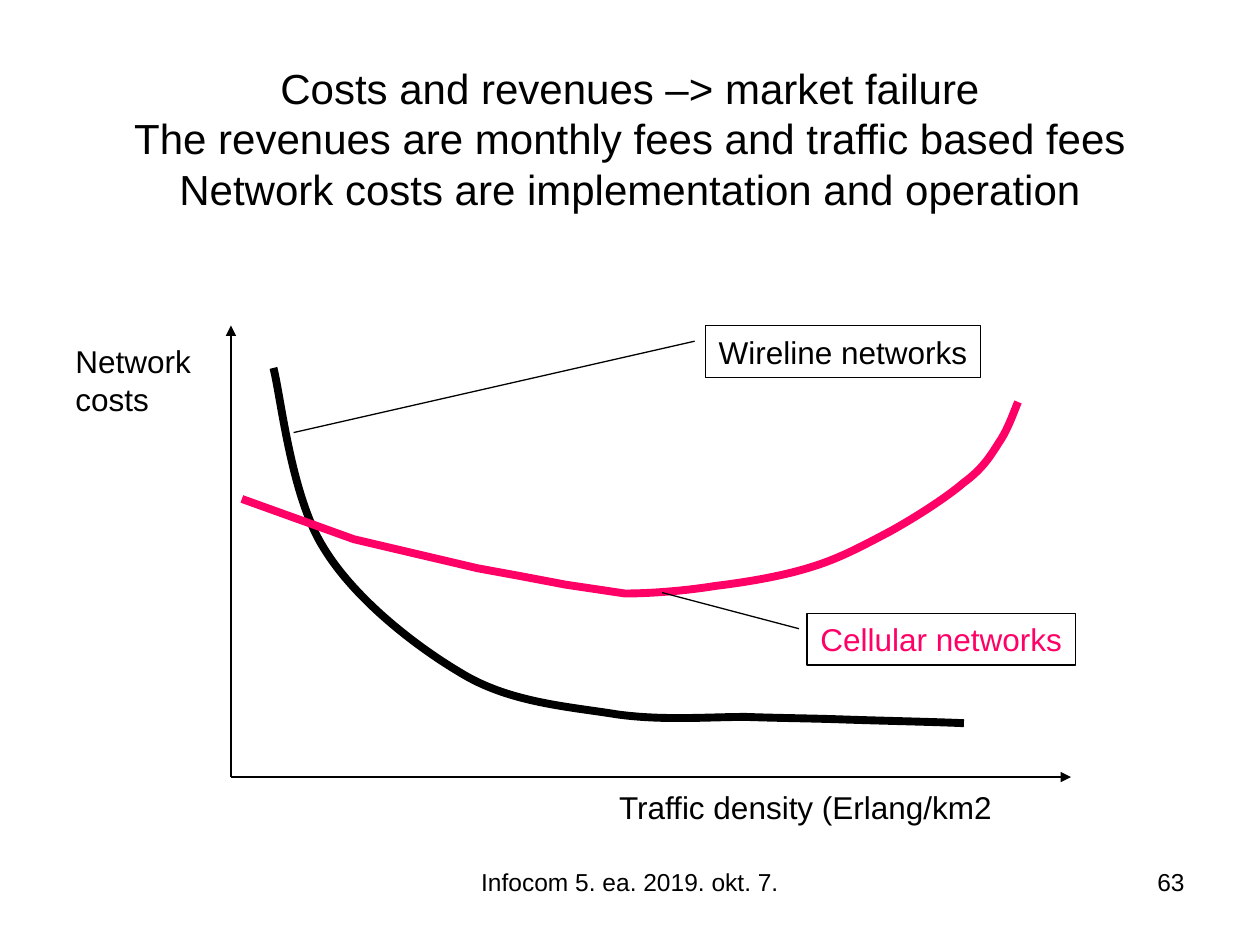
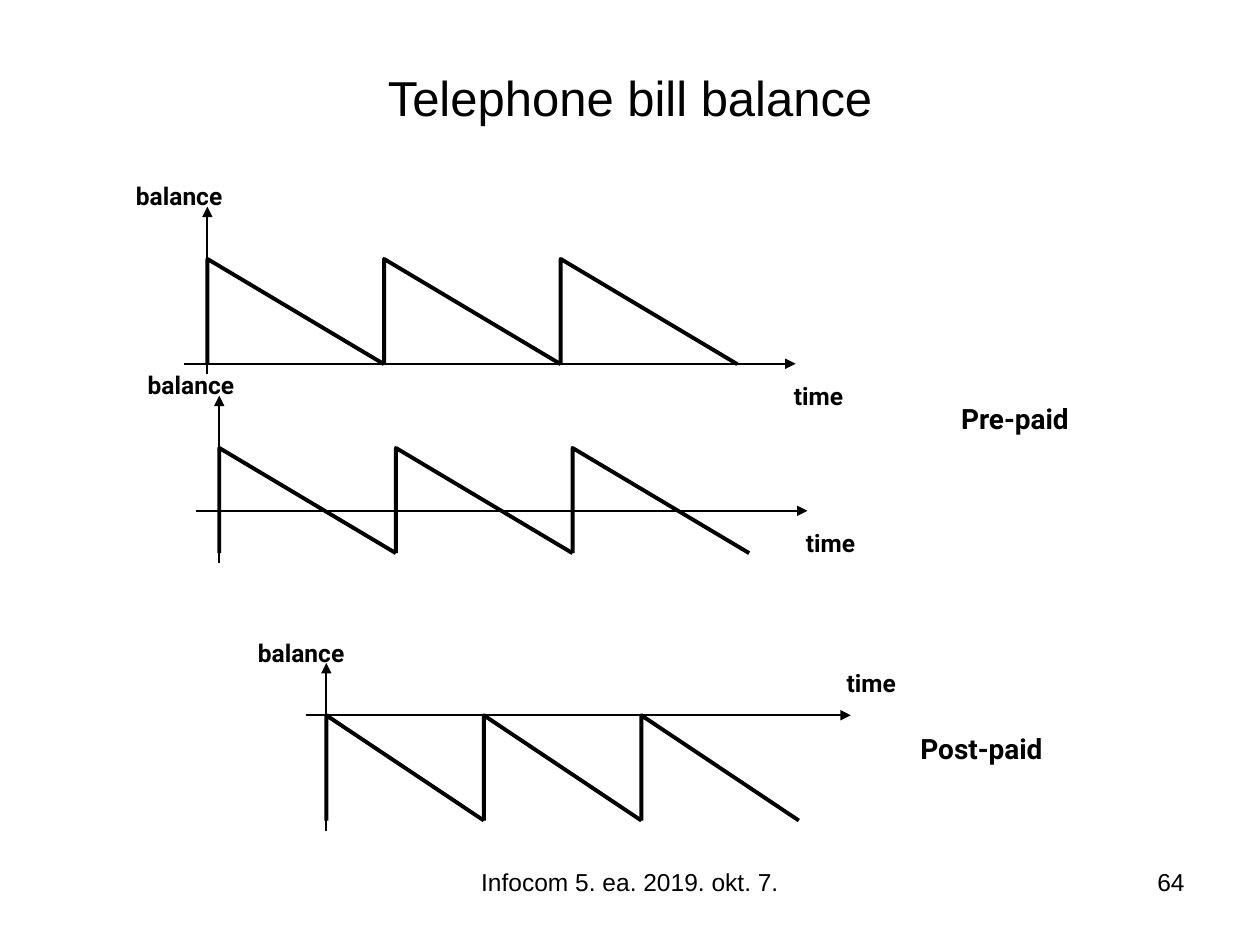
from dataclasses import dataclass
from typing import Any, NamedTuple

from lxml import etree
from pptx import Presentation
from pptx.dml.color import RGBColor
from pptx.enum.shapes import MSO_CONNECTOR, MSO_SHAPE
from pptx.enum.text import MSO_ANCHOR, PP_ALIGN
from pptx.oxml.ns import qn
from pptx.util import Inches, Pt

BLACK = RGBColor(0x00, 0x00, 0x00)
PINK = RGBColor(0xFF, 0x00, 0x66)
LEFT, CENTER, RIGHT = PP_ALIGN.LEFT, PP_ALIGN.CENTER, PP_ALIGN.RIGHT
TOP, MIDDLE = MSO_ANCHOR.TOP, MSO_ANCHOR.MIDDLE
STRAIGHT = MSO_CONNECTOR.STRAIGHT
CALLOUT = MSO_SHAPE.LINE_CALLOUT_1

SLIDE_WIDTH, SLIDE_HEIGHT = Inches(10), Inches(7.5)
COLUMN, ROW = SLIDE_WIDTH / 100, SLIDE_HEIGHT / 75
THIN, CURVE_WIDTH = 0.75, 4.5
AXIS_WIDTH, TOOTH_WIDTH = 1, 2.25
FOOTER = "Infocom 5. ea. 2019. okt. 7."


class Point(NamedTuple):
    column: float
    row: float


class Box(NamedTuple):
    column: float
    row: float
    columns: float
    rows: float


@dataclass(frozen=True)
class TextStyle:
    size: float
    font: str = "Arial"
    color: RGBColor = BLACK
    bold: bool = False
    align: PP_ALIGN = LEFT
    anchor: MSO_ANCHOR = TOP
    wrap: bool = True


@dataclass(frozen=True)
class Curve:
    """A stroke whose segments hold one point (straight) or three (cubic)."""
    start: tuple
    segments: tuple
    color: RGBColor = BLACK
    width: float = CURVE_WIDTH


@dataclass(frozen=True)
class Callout:
    text: str
    box: Box
    leader: tuple[float, ...]
    color: RGBColor


@dataclass(frozen=True)
class BalanceGraph:
    """A sawtooth balance; time_row is the axis, time_shift its label's offset."""
    origin: float
    top: float
    period: float
    time_row: float
    time_shift: float


CENTERED = {"align": CENTER, "anchor": MIDDLE}
LONG_TITLE = TextStyle(24, **CENTERED)
SHORT_TITLE = TextStyle(28, **CENTERED)
FOOTER_STYLE = TextStyle(14, align=CENTER)
NUMBER_STYLE = TextStyle(14, align=RIGHT)
COST_STYLE = TextStyle(18)
TRAFFIC_STYLE = TextStyle(18, wrap=False)
BALANCE_STYLE = TextStyle(14, "Roboto", bold=True, wrap=False, **CENTERED)
PAYMENT_STYLE = TextStyle(16, "Roboto", bold=True, **CENTERED)

WIRELINE = Curve((21.7, 29.2), (
    ((22.3, 31.5), (23.1, 39.4), (25.7, 43.5)),
    ((28.2, 47.6), (33.1, 51.4), (36.9, 53.6)),
    ((40.7, 55.8), (45.3, 56.1), (49, 56.7)),
    ((52.7, 57.2), (56.2, 56.9), (59.2, 56.9)),
    ((62.2, 57), (64, 57), (66.9, 57.1)),
    ((69.8, 57.2), (74.5, 57.3), (76.5, 57.4)),
))
CELLULAR = Curve((19.2, 39.6), (
    ((28.1, 42.8),), ((37.9, 45.1),), ((41.2, 45.7),), ((44.9, 46.4),), ((49.6, 47.1),),
    ((51.6, 47.1), (54.3, 46.9), (56.8, 46.5)),
    ((59.3, 46.2), (62.2, 45.7), (64.4, 45)),
    ((66.7, 44.3), (68.5, 43.3), (70.6, 42.2)),
    ((72.6, 41.1), (75.1, 39.5), (76.5, 38.3)),
    ((78, 37.2), (78.6, 36.2), (79.3, 35.1)),
    ((80, 34.1), (80.5, 32.6), (80.8, 31.9)),
), PINK)
NETWORKS = (
    (WIRELINE, Callout("Wireline networks", Box(56, 25.85, 21.8, 4.1),
                       (0.3, -0.04, 2.07, -1.5), BLACK)),
    (CELLULAR, Callout("Cellular networks", Box(64.05, 48.67, 21.3, 4.1),
                       (0.3, -0.03, -0.4, -0.54), PINK)),
)
COST_ORIGIN = Point(18.33, 61.67)
COST_AXIS_ENDS = (Point(85, 61.67), Point(18.33, 25.83))

TEETH = 3
PEAK_DROP, TOOTH_ROWS, AXIS_TAIL = 4.15, 8.35, 0.8
BALANCE_GRAPHS = (
    BalanceGraph(16.46, 16.4, 14.02, 28.87, 0.85),
    BalanceGraph(17.4, 31.4, 14.02, 40.54, 0.85),
    BalanceGraph(25.9, 52.62, 12.5, 56.77, -4.2),
)
PAYMENT_LABELS = (
    ("Pre-paid", Box(72.55, 31.35, 16, 3.7)),
    ("Post-paid", Box(70.75, 57.55, 14.3, 3.7)),
)


def apply(target: Any, values: dict[str, Any]) -> None:
    for name, value in values.items():
        setattr(target, name, value)


def emu(point: tuple[float, float]) -> tuple[int, int]:
    return round(point[0] * COLUMN), round(point[1] * ROW)


def place(box: Box) -> tuple[int, ...]:
    return emu(box[:2]) + emu(box[2:])


def write(shape: Any, lines: tuple[str, ...], style: TextStyle) -> None:
    apply(shape.text_frame, {"word_wrap": style.wrap, "vertical_anchor": style.anchor})
    paragraph = shape.text_frame.paragraphs[0]
    paragraph.alignment = style.align
    for index, line in enumerate(lines):
        if index:
            paragraph.add_line_break()
        run = paragraph.add_run()
        run.text = line
        apply(run.font, {"size": Pt(style.size), "name": style.font, "bold": style.bold})
        run.font.color.rgb = style.color


def add_text(slide: Any, box: Box, style: TextStyle, *lines: str) -> None:
    write(slide.shapes.add_textbox(*place(box)), lines, style)


def stroke(shape: Any, width: float, color: RGBColor = BLACK) -> None:
    shape.line.color.rgb = color
    shape.line.width = Pt(width)


def add_arrow(slide: Any, start: Point, end: Point, width: float) -> None:
    arrow = slide.shapes.add_connector(STRAIGHT, *emu(start), *emu(end))
    stroke(arrow, width)
    properties = arrow.line._get_or_add_ln()
    etree.SubElement(properties, qn("a:tailEnd"), type="triangle")
    etree.SubElement(arrow._element.spPr, qn("a:effectLst"))


def add_curve(slide: Any, curve: Curve) -> None:
    """Draw straight segments, then bend those that have control points."""
    builder = slide.shapes.build_freeform(*emu(curve.start))
    builder.add_line_segments([emu(segment[-1]) for segment in curve.segments], close=False)
    outline = builder.convert_to_shape()
    outline.fill.background()
    outline.shadow.inherit = False
    stroke(outline, curve.width, curve.color)
    straights = list(outline._element.iter(qn("a:lnTo")))
    for straight, segment in zip(straights, curve.segments):
        if len(segment) == 1:
            continue
        bend = etree.Element(qn("a:cubicBezTo"))
        for point in segment:
            x, y = emu(point)
            etree.SubElement(bend, qn("a:pt"), x=str(x - outline.left), y=str(y - outline.top))
        straight.getparent().replace(straight, bend)


def add_callout(slide: Any, callout: Callout) -> None:
    label = slide.shapes.add_shape(CALLOUT, *place(callout.box))
    for index, value in enumerate(callout.leader):
        label.adjustments[index] = value
    label.fill.background()
    label.shadow.inherit = False
    stroke(label, THIN)
    write(label, (callout.text,), TextStyle(18, color=callout.color, wrap=False, **CENTERED))


def add_balance_graph(slide: Any, graph: BalanceGraph) -> None:
    def at(periods: float) -> float:
        return graph.origin + periods * graph.period

    peak = graph.top + PEAK_DROP
    base = peak + TOOTH_ROWS
    add_arrow(slide, Point(at(0), base + AXIS_TAIL), Point(at(0), graph.top), AXIS_WIDTH)
    add_arrow(slide, Point(at(-0.13), graph.time_row), Point(at(3.33), graph.time_row), AXIS_WIDTH)
    for tooth in range(TEETH):
        corners = ((at(tooth), peak),), ((at(tooth + 1), base),)
        add_curve(slide, Curve((at(tooth), base), corners, width=TOOTH_WIDTH))
    labels = (("balance", at(-0.16), 9.2, graph.top - 2.5),
              ("time", at(3.46), 6, graph.time_row + graph.time_shift))
    for text, center, columns, row in labels:
        add_text(slide, Box(center - columns / 2, row, columns, 3.3), BALANCE_STYLE, text)


def add_slide(deck: Any, number: int, title_rows: float, style: TextStyle, *title: str) -> Any:
    """Add a blank slide with the shared title, footer and slide number."""
    slide = deck.slides.add_slide(deck.slide_layouts[6])
    add_text(slide, Box(34.17, 68.3, 31.67, 5.2), FOOTER_STYLE, FOOTER)
    add_text(slide, Box(71.67, 68.3, 23.33, 5.2), NUMBER_STYLE, str(number))
    add_text(slide, Box(5, 3, 90, title_rows), style, *title)
    return slide


def build_costs(deck: Any) -> None:
    slide = add_slide(deck, 63, 15.9, LONG_TITLE,
                      "Costs and revenues –> market failure",
                      "The revenues are monthly fees and traffic based fees",
                      "Network costs are implementation and operation")
    for end in COST_AXIS_ENDS:
        add_arrow(slide, COST_ORIGIN, end, THIN)
    add_text(slide, Box(48.15, 62.05, 31.7, 4), TRAFFIC_STYLE, "Traffic density (Erlang/km2")
    add_text(slide, Box(5, 26.65, 12.5, 7), COST_STYLE, "Network costs")
    for curve, callout in NETWORKS:
        add_curve(slide, curve)
        add_callout(slide, callout)


def build_balance(deck: Any) -> None:
    slide = add_slide(deck, 64, 9.4, SHORT_TITLE, "Telephone bill balance")
    for graph in BALANCE_GRAPHS:
        add_balance_graph(slide, graph)
    for text, box in PAYMENT_LABELS:
        add_text(slide, box, PAYMENT_STYLE, text)


def main() -> None:
    deck = Presentation()
    apply(deck, {"slide_width": SLIDE_WIDTH, "slide_height": SLIDE_HEIGHT})
    build_costs(deck)
    build_balance(deck)
    deck.save("out.pptx")


if __name__ == "__main__":
    main()
